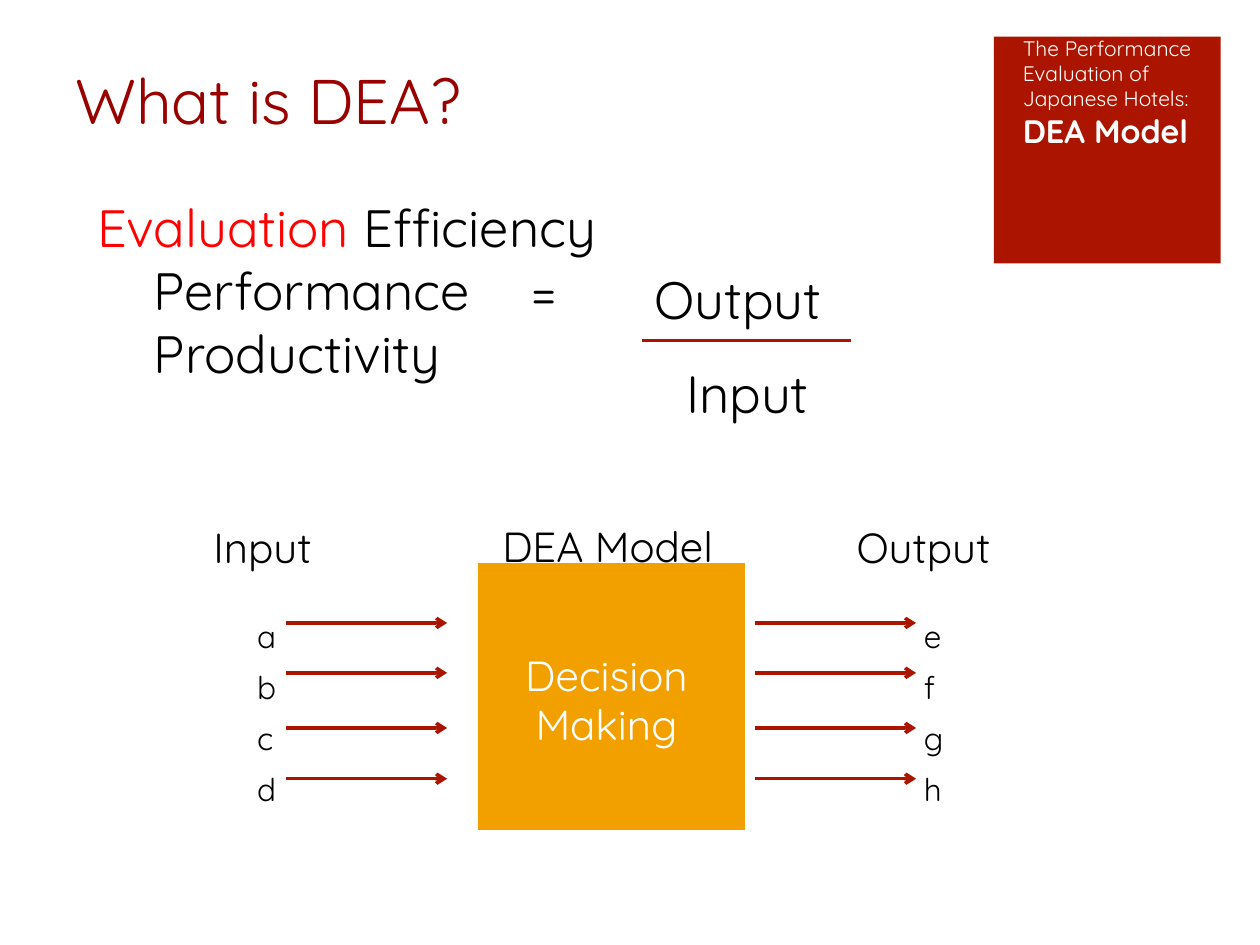
"""Build the slide that explains data envelopment analysis as output over input."""
from pptx import Presentation
from pptx.dml.color import RGBColor
from pptx.enum.shapes import MSO_CONNECTOR, MSO_SHAPE
from pptx.enum.text import MSO_ANCHOR, PP_ALIGN
from pptx.oxml.ns import qn
from pptx.util import Pt
from lxml.etree import SubElement

FONT = "Quicksand"
RED, ORANGE, WHITE, BLACK = "AB1500", "F1A000", "FFFFFF", "000000"

TITLE = ("What is DEA?", 43, 36, 500, 44, 36, "990000")
LABELS = [
    ("Output", 374, 152.5, 120, 36, 30, BLACK),
    ("Input", 392, 206.5, 90, 36, 30, BLACK),
    ("DEA Model", 287, 297.5, 140, 30, 24, BLACK),
    ("Input", 122, 298, 80, 30, 24, BLACK),
    ("Output", 489.5, 298, 100, 30, 24, BLACK),
]
MEASURES = [
    [("Evaluation ", "FF0000"), ("Efficiency", BLACK)],
    [("Performance\t= Productivity", BLACK)],
]
BANNER = [
    ("The Performance Evaluation of Japanese Hotels:", 12, False, 14),
    ("DEA Model", 18.5, True, 22.7),
]
FLOWS = [("a\nb\nc\nd", 147, 163.5), ("e\nf\ng\nh", 528, 431.5)]
ARROW_ROWS = [356, 384.5, 416, 445]
ARROW_LENGTH = 92


def color(value):
    return RGBColor.from_string(value)


def style(run, size, value, bold=False):
    run.font.name = FONT
    run.font.size = Pt(size)
    run.font.bold = bold
    run.font.color.rgb = color(value)


def clear_margins(text_frame):
    text_frame.word_wrap = True
    text_frame.vertical_anchor = MSO_ANCHOR.TOP
    text_frame.margin_left = text_frame.margin_right = 0
    text_frame.margin_top = text_frame.margin_bottom = 0


def add_text(slide, text, left, top, width, height, size, value, spacing=None, align=PP_ALIGN.LEFT):
    shape = slide.shapes.add_textbox(Pt(left), Pt(top), Pt(width), Pt(height))
    clear_margins(shape.text_frame)
    shape.text_frame.text = text
    for paragraph in shape.text_frame.paragraphs:
        paragraph.alignment = align
        paragraph.line_spacing = spacing
        for run in paragraph.runs:
            style(run, size, value)
    return shape


def add_square(slide, left, top, side, fill):
    shape = slide.shapes.add_shape(MSO_SHAPE.RECTANGLE, Pt(left), Pt(top), Pt(side), Pt(side))
    shape.shadow.inherit = False
    shape.fill.solid()
    shape.fill.fore_color.rgb = color(fill)
    shape.line.fill.background()
    return shape


def add_line(slide, left, top, length, arrow=False):
    connector = slide.shapes.add_connector(
        MSO_CONNECTOR.STRAIGHT, Pt(left), Pt(top), Pt(left + length), Pt(top)
    )
    connector.line.color.rgb = color(RED)
    connector.line.width = Pt(2)
    properties = connector.line._get_or_add_ln()
    if arrow:
        SubElement(properties, qn("a:tailEnd"), type="arrow", w="med", len="med")
    SubElement(connector._element.spPr, qn("a:effectLst"))


def add_measures(slide):
    shape = add_text(slide, "", 55, 106, 291.5, 143, 30, BLACK)
    first = shape.text_frame.paragraphs[0]
    second = shape.text_frame.add_paragraph()
    first.line_spacing = 1.15
    for paragraph, runs, indent in zip((first, second), MEASURES, (-32.5, 0)):
        for text, value in runs:
            run = paragraph.add_run()
            run.text = text
            style(run, 30, value)
        properties = paragraph._p.get_or_add_pPr()
        properties.set("marL", str(Pt(33)))
        properties.set("indent", str(Pt(indent)))
    tabs = SubElement(second._p.get_or_add_pPr(), qn("a:tabLst"))
    SubElement(tabs, qn("a:tab"), pos=str(Pt(273)), algn="l")


def add_banner(slide):
    text_frame = add_square(slide, 568, 21, 129.6, RED).text_frame
    clear_margins(text_frame)
    text_frame.margin_left = Pt(16.5)
    text_frame.text = "\n".join(text for text, *_ in BANNER)
    for paragraph, (_, size, bold, spacing) in zip(text_frame.paragraphs, BANNER):
        paragraph.alignment = PP_ALIGN.LEFT
        paragraph.line_spacing = Pt(spacing)
        style(paragraph.runs[0], size, WHITE, bold)


def main():
    presentation = Presentation()
    presentation.slide_width, presentation.slide_height = Pt(720), Pt(540)
    slide = presentation.slides.add_slide(presentation.slide_layouts[6])

    add_text(slide, *TITLE, spacing=Pt(42.5))
    add_banner(slide)
    add_measures(slide)
    add_line(slide, 367, 194.5, 119)

    model = add_square(slide, 272, 320.5, 155, ORANGE)
    model.line.color.rgb = color(WHITE)
    model.line.width = Pt(2.5)
    add_text(slide, "Decision Making", 299, 372, 95, 56, 24, WHITE, Pt(28), PP_ALIGN.CENTER)

    for label in LABELS:
        add_text(slide, *label)
    for letters, text_left, arrow_left in FLOWS:
        add_text(slide, letters, text_left, 345, 14.5, 108, 18, BLACK, 1.35)
        for row in ARROW_ROWS:
            add_line(slide, arrow_left, row, ARROW_LENGTH, arrow=True)

    presentation.save("out.pptx")


if __name__ == "__main__":
    main()
